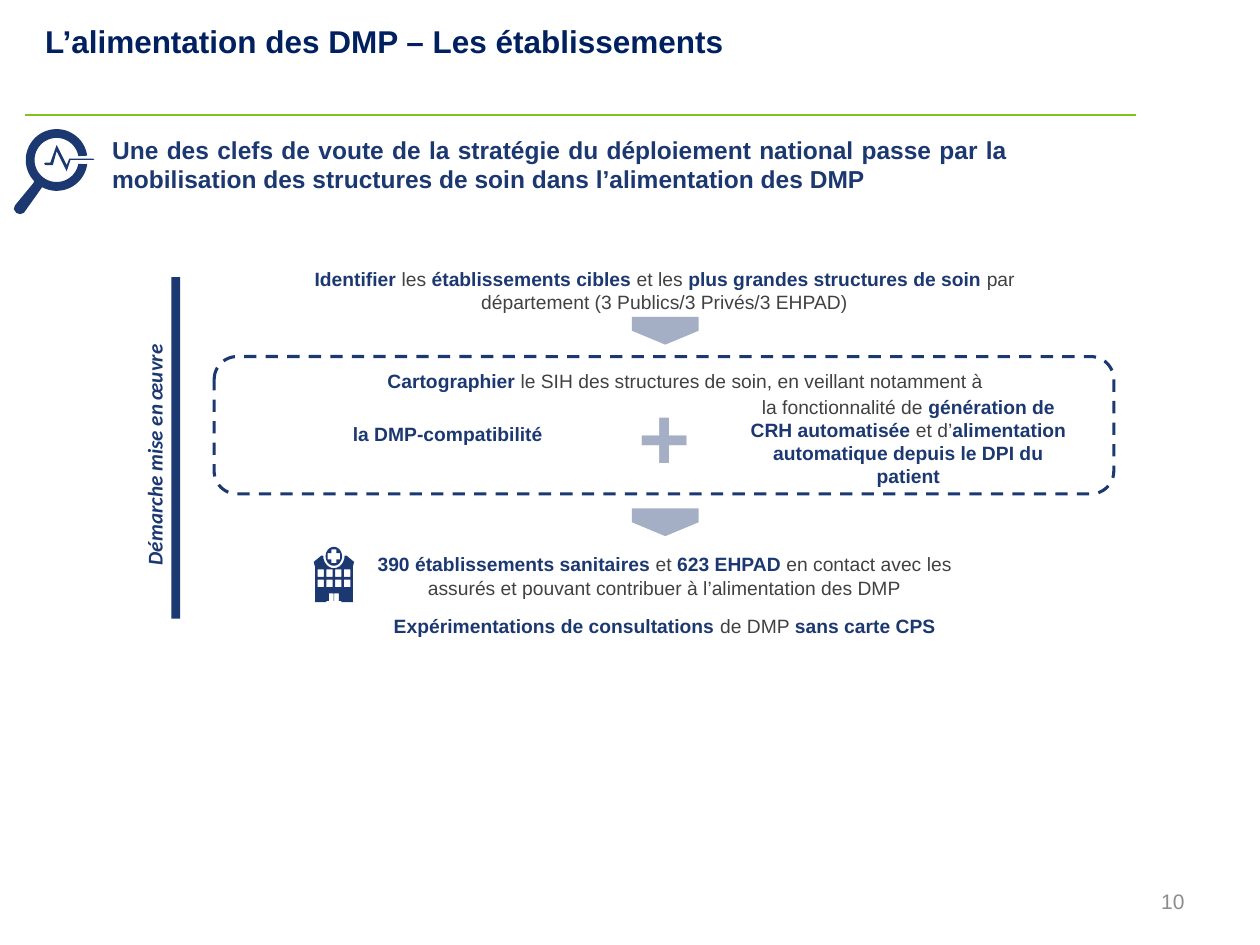
"""Builds a slide on how health facilities feed the DMP."""
from math import cos, radians, sin

from lxml import etree
from pptx import Presentation
from pptx.dml.color import RGBColor
from pptx.enum.dml import MSO_LINE
from pptx.enum.shapes import MSO_CONNECTOR, MSO_SHAPE
from pptx.enum.text import MSO_ANCHOR, PP_ALIGN
from pptx.oxml.ns import qn
from pptx.util import Inches, Pt

TOP, MIDDLE = MSO_ANCHOR.TOP, MSO_ANCHOR.MIDDLE
LEFT, CENTER, RIGHT, JUSTIFY = PP_ALIGN.LEFT, PP_ALIGN.CENTER, PP_ALIGN.RIGHT, PP_ALIGN.JUSTIFY
COLORS = {
    "navy": "1C3871", "title": "002060", "text": "414143",
    "number": "8C8C8C", "rule": "7FC31C", "plus": "A4AFC6",
}
PALETTE = {name: RGBColor.from_string(value) for name, value in COLORS.items()}

presentation = Presentation()
presentation.slide_width, presentation.slide_height = Inches(10), Inches(7.5)
COLUMN = presentation.slide_width / 100
ROW = presentation.slide_height / 75
slide = presentation.slides.add_slide(presentation.slide_layouts[6])
shapes = slide.shapes


def grid(left, top, width, height):
    return [round(value * unit) for value, unit in zip((left, top, width, height), (COLUMN, ROW) * 2)]


def add_text(box, text, size=11, align=CENTER, anchor=MIDDLE, bold_color="navy", plain_color="text"):
    shape = shapes.add_textbox(*grid(*box))
    frame = shape.text_frame
    frame.word_wrap = True
    frame.vertical_anchor = anchor
    paragraph = frame.paragraphs[0]
    paragraph.alignment = align
    paragraph.font.size = Pt(size)
    paragraph.font.name = "Arial"
    for index, part in enumerate(text.split("*")):
        if part:
            run = paragraph.add_run()
            run.text = part
            run.font.bold = index % 2 == 1
            run.font.color.rgb = PALETTE[bold_color if index % 2 else plain_color]
    return shape


rule = shapes.add_connector(MSO_CONNECTOR.STRAIGHT, *grid(2, 9.15, 90.2, 9.15))
rule.line.color.rgb = PALETTE["rule"]
rule.line.width = Pt(1)
etree.SubElement(rule._element.spPr, qn("a:effectLst"))

add_text((71.7, 69.5, 23.3, 4), "10", 12, RIGHT, plain_color="number")
title = add_text((2.6, 0.8, 82.4, 5.5), "*L’alimentation des DMP – Les établissements*", 18, LEFT, bold_color="title")
title.text_frame.paragraphs[0].line_spacing = 0.8
heading = add_text(
    (8, 10.3, 72.9, 5.8),
    "*Une des clefs de voute de la stratégie du déploiement national passe par la "
    "mobilisation des structures de soin dans l’alimentation des DMP*",
    14, JUSTIFY, TOP,
)
heading.text_frame.margin_left = heading.text_frame.margin_right = Inches(0.09)
heading.text_frame.margin_top = heading.text_frame.margin_bottom = Inches(0.04)

for box, text in (
    ((20.9, 21.1, 63.7, 3.9),
     "*Identifier *les *établissements cibles *et les *plus grandes structures de soin *"
     "par département (3 Publics/3 Privés/3 EHPAD)"),
    ((26.6, 28.3, 55.6, 3.8),
     "*Cartographier *le SIH des structures de soin, en veillant notamment à"),
    ((24.3, 32.7, 22.9, 3.4), "*la DMP-compatibilité *"),
    ((58.3, 31.9, 27.6, 6.3),
     "la fonctionnalité de *génération de CRH automatisée *et d’*"
     "alimentation automatique depuis le DPI du patient*"),
    ((27.8, 43.2, 49.9, 5),
     "*390 établissements sanitaires *et *623 EHPAD *"
     "en contact avec les assurés et pouvant contribuer à l’alimentation des DMP"),
    ((30, 48.2, 45.5, 2.9), "*Expérimentations de consultations *de DMP *sans carte CPS*"),
):
    add_text(box, text)

plus = add_text((49.7, 31.4, 6.2, 7.9), "*+*", 51, JUSTIFY, TOP, "plus")
plus.text_frame.word_wrap = False
plus.text_frame.paragraphs[0].line_spacing = 0.8

side_label = add_text((-1.6, 35.1, 27.7, 2), "*Démarche mise en œuvre*", 12, anchor=TOP)
side_label.rotation = 270
side_frame = side_label.text_frame
side_frame.margin_left = side_frame.margin_right = side_frame.margin_top = side_frame.margin_bottom = 0
side_frame.paragraphs[0].font.name = "Calibri"
side_frame.paragraphs[0].font.italic = True

filled_shapes = [shapes.add_shape(MSO_SHAPE.RECTANGLE, *grid(13.6, 22, 0.7, 27.1))]
arrows = [shapes.add_shape(MSO_SHAPE.PENTAGON, *grid(51.7, top, 2.2, 5.3)) for top in (23.6, 38.8)]
filled_shapes += arrows

dashed_frame = shapes.add_shape(MSO_SHAPE.ROUNDED_RECTANGLE, *grid(17, 28.3, 71.4, 10.9))
dashed_frame.shadow.inherit = False
dashed_frame.fill.background()
dashed_frame.line.color.rgb = PALETTE["navy"]
dashed_frame.line.width = Pt(1.75)
dashed_frame.line.dash_style = MSO_LINE.DASH

lens = {
    name: [(4.5 + radius * cos(radians(angle)), 12.7 + radius * sin(radians(angle))) for angle in angles]
    for name, radius, angles in (
        ("lower", 2.45, range(8, 119, 5)),
        ("upper", 2.45, range(136, 353, 6)),
        ("inner", 1.75, range(350, 9, -5)),
    )
}
handle = [(1.9, 16.9), (1.6, 17), (1.3, 16.9), (1.1, 16.6), (1.2, 16.3), (2.6, 14.6)]
magnifier = lens["lower"] + handle + lens["upper"] + lens["inner"]
pulse = [
    (7.4, 12.7), (5.6, 12.7), (5.3, 13.6), (4.5, 12), (4.2, 13.1), (3.6, 13.1), (3.5, 13),
    (3.6, 12.9), (4, 12.9), (4.5, 11.5), (5.3, 13.1), (5.5, 12.6), (7.4, 12.6), (7.5, 12.65),
]
notch = [(26.5 + 0.85 * cos(radians(a)), 44.1 + sin(radians(a))) for a in range(0, 181, 15)]
building = notch + [
    (25.5, 44.1), (24.9, 44.6), (25, 45), (25, 47.8), (25.9, 47.8), (25.9, 47.7),
    (26.1, 47.7), (26.1, 47.1), (26.48, 47.1), (26.48, 47.7), (26.52, 47.7), (26.52, 47.1),
    (26.9, 47.1), (26.9, 47.7), (27.1, 47.7), (27.1, 47.8), (28, 47.8), (28, 45),
    (28.1, 44.6), (27.5, 44.1),
]
windows = [
    [(x, y), (x + 0.5, y), (x + 0.5, y + 0.6), (x, y + 0.6)]
    for y in (45.2, 46) for x in (25.2, 25.9, 26.6, 27.3)
]
badge = [(26.5 + 0.65 * cos(radians(a)), 44.15 + 0.75 * sin(radians(a))) for a in range(0, 360, 10)]
cross = [
    (26, 43.9), (26.3, 43.9), (26.3, 43.6), (26.7, 43.6), (26.7, 43.9), (27, 43.9),
    (27, 44.4), (26.7, 44.4), (26.7, 44.7), (26.3, 44.7), (26.3, 44.4), (26, 44.4),
]

for contours in ([magnifier], [pulse], [building, *windows], [badge, cross]):
    builder = None
    for contour in contours:
        points = [(round(x * COLUMN), round(y * ROW)) for x, y in contour]
        if builder is None:
            builder = shapes.build_freeform(*points[0])
        else:
            builder.move_to(*points[0])
        builder.add_line_segments(points[1:], close=True)
    filled_shapes.append(builder.convert_to_shape())

for shape in filled_shapes:
    shape.shadow.inherit = False
    shape.fill.solid()
    shape.fill.fore_color.rgb = PALETTE["navy"]
    shape.line.fill.background()

for arrow in arrows:
    arrow.rotation = 90
    color = arrow._element.spPr.find(qn("a:solidFill")).find(qn("a:srgbClr"))
    etree.SubElement(color, qn("a:alpha")).set("val", "40000")

presentation.save("out.pptx")
